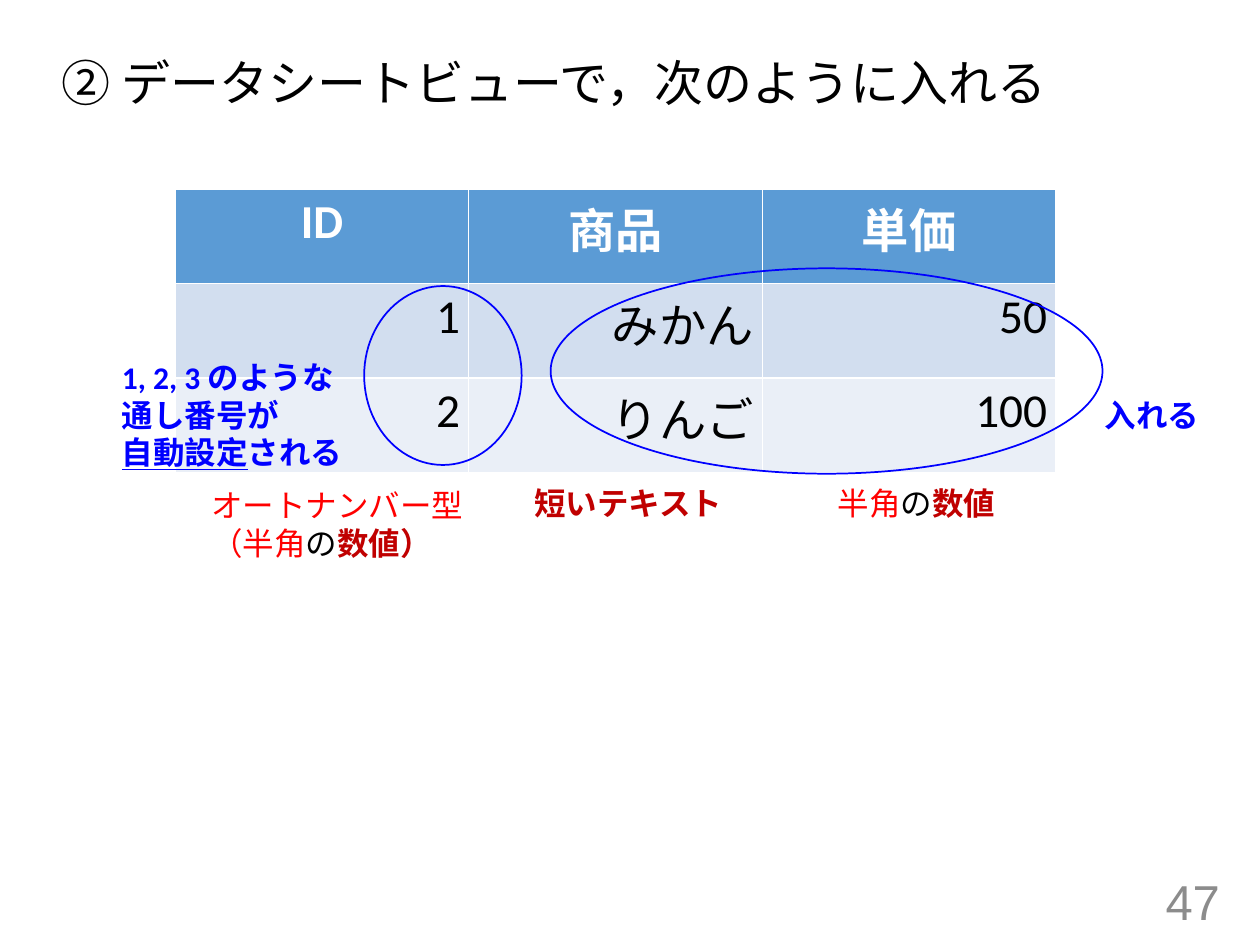
from lxml.etree import SubElement
from pptx import Presentation
from pptx.dml.color import RGBColor
from pptx.enum.shapes import MSO_SHAPE
from pptx.enum.text import MSO_ANCHOR, PP_ALIGN
from pptx.oxml.ns import qn
from pptx.util import Inches, Pt

BLACK = RGBColor(0, 0, 0)
WHITE = RGBColor(0xFF, 0xFF, 0xFF)
GRAY = RGBColor(0x8C, 0x8C, 0x8C)
RED = RGBColor(0xFF, 0, 0)
DARK_RED = RGBColor(0xC0, 0, 0)
BLUE = RGBColor(0, 0, 0xFF)
HEADER = RGBColor(0x5B, 0x9B, 0xD5)
BAND_DARK = RGBColor(0xD2, 0xDE, 0xEF)
BAND_LIGHT = RGBColor(0xEA, 0xEF, 0xF7)
JAPANESE = "Noto Sans CJK JP"


def set_font(p, size, color, bold=False, name="Calibri"):
    """Style a paragraph, with the Japanese font for East Asian letters."""
    p.font.size = Pt(size)
    p.font.bold = bold
    p.font.color.rgb = color
    p.font.name = name
    default = p._p.pPr.find(qn("a:defRPr"))
    SubElement(default, qn("a:ea")).set("typeface", JAPANESE)


def add_text(left, top, width, height):
    sp = slide.shapes.add_textbox(Inches(left), Inches(top), Inches(width), Inches(height))
    return sp.text_frame


prs = Presentation()
prs.slide_width = Inches(10)
prs.slide_height = Inches(7.5)
slide = prs.slides.add_slide(prs.slide_layouts[6])

# Page number
tf = add_text(7.53, 6.95, 2.25, 0.4)
tf.word_wrap = True
tf.vertical_anchor = MSO_ANCHOR.MIDDLE
p = tf.paragraphs[0]
p.text = "47"
p.alignment = PP_ALIGN.RIGHT
set_font(p, 28, GRAY, name="Arial")

# Table
rows = [
    (HEADER, ["ID", "商品", "単価"]),
    (BAND_DARK, ["1", "みかん", "50"]),
    (BAND_LIGHT, ["2", "りんご", "100"]),
]
table = slide.shapes.add_table(
    3, 3, Inches(1.39), Inches(1.5), Inches(6.99), Inches(2.25)
).table
for i, (fill, values) in enumerate(rows):
    is_header = i == 0
    for j, value in enumerate(values):
        cell = table.cell(i, j)
        cell.fill.solid()
        cell.fill.fore_color.rgb = fill
        cell.margin_left = cell.margin_right = Inches(0.07)
        cell.margin_top = cell.margin_bottom = Inches(0.04)
        p = cell.text_frame.paragraphs[0]
        p.text = value
        p.alignment = PP_ALIGN.CENTER if is_header else PP_ALIGN.RIGHT
        set_font(p, 27, WHITE if is_header else BLACK, is_header)

# Heading
tf = add_text(0.42, 0.43, 8.78, 0.57)
tf.word_wrap = True
tf.margin_left = tf.margin_right = Inches(0.07)
tf.margin_top = tf.margin_bottom = Inches(0.04)
p = tf.paragraphs[0]
p.text = "② データシートビューで，次のように入れる"
p.line_spacing = 0.9
p.space_before = Pt(10)
set_font(p, 28, BLACK, name=JAPANESE)

# Rings around the entered values
for left, top, width, height in [(2.89, 2.27, 1.25, 1.42), (4.37, 2.13, 4.38, 1.63)]:
    sp = slide.shapes.add_shape(
        MSO_SHAPE.OVAL, Inches(left), Inches(top), Inches(width), Inches(height)
    )
    sp.shadow.inherit = False
    sp.fill.background()
    sp.line.color.rgb = BLUE
    sp.line.width = Pt(1)

# Data types below the columns: each line is a list of (text, colour, bold)
half_width = [("半角", RED, False), ("の", BLACK, False), ("数値", DARK_RED, True)]
type_labels = [
    (1.58, 3.81, 2.22, 1.01, [
        [("オートナンバー型", RED, False)],
        [("（", RED, False), *half_width, ("）", DARK_RED, True)],
    ]),
    (4.14, 3.79, 1.72, 0.4, [[("短いテキスト", DARK_RED, True)]]),
    (6.55, 3.79, 1.46, 0.4, [half_width]),
]
for left, top, width, height, lines in type_labels:
    tf = add_text(left, top, width, height)
    tf.word_wrap = False
    for i, runs in enumerate(lines):
        p = tf.add_paragraph() if i else tf.paragraphs[0]
        set_font(p, 18, RED)
        for text, color, bold in runs:
            r = p.add_run()
            r.text = text
            r.font.color.rgb = color
            r.font.bold = bold

# Blue notes beside the rings: each line is a list of (text, underlined)
notes = [
    (0.87, 2.79, 1.97, 1.01, [
        [("1, 2, 3 のような", False)],
        [("通し番号が", False)],
        [("自動設定", True), ("される", False)],
    ]),
    (8.67, 3.09, 0.96, 0.4, [[("入れる", False)]]),
]
for left, top, width, height, lines in notes:
    tf = add_text(left, top, width, height)
    tf.word_wrap = False
    for i, runs in enumerate(lines):
        p = tf.add_paragraph() if i else tf.paragraphs[0]
        set_font(p, 18, BLUE, True)
        for text, underlined in runs:
            r = p.add_run()
            r.text = text
            r.font.underline = underlined

prs.save("out.pptx")
